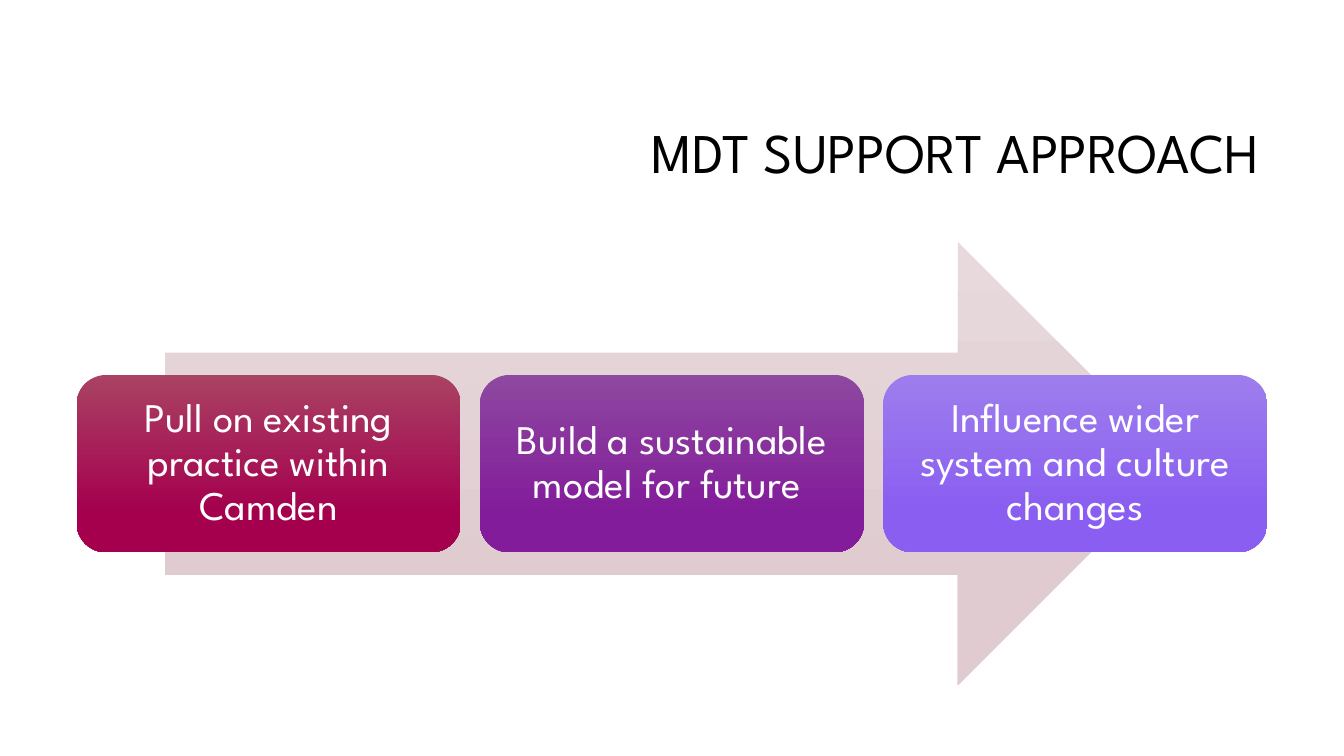
"""Build the MDT support approach slide: three steps along an arrow."""
from pptx import Presentation
from pptx.dml.color import RGBColor
from pptx.enum import shapes, text
from pptx.util import Inches, Pt

FONT = "League Spartan"
STEPS = [
    ("Pull on existing practice within Camden", "A94263", "A4004E"),
    ("Build a sustainable model for future ", "8D48A0", "831C9A"),
    ("Influence wider system and culture changes", "9D7DED", "8A5EF1"),
]


def add_gradient_shape(kind, left, top, width, height, top_color, bottom_color):
    shape = slide.shapes.add_shape(
        kind, Inches(left), Inches(top), Inches(width), Inches(height))
    shape.shadow.inherit = False
    shape.line.fill.background()
    shape.fill.gradient()
    shape.fill.gradient_angle = 270
    stops = zip(shape.fill.gradient_stops, (0, 0.78), (top_color, bottom_color))
    for stop, position, color in stops:
        stop.position = position
        stop.color.rgb = RGBColor.from_string(color)
    return shape


def set_text(shape, wording, size, color, alignment):
    frame = shape.text_frame
    frame.text = wording
    frame.word_wrap = True
    frame.auto_size = text.MSO_AUTO_SIZE.NONE
    frame.vertical_anchor = text.MSO_ANCHOR.MIDDLE
    paragraph = frame.paragraphs[0]
    paragraph.alignment = alignment
    paragraph.line_spacing = 0.9
    paragraph.font.name = FONT
    paragraph.font.size = Pt(size)
    paragraph.font.color.rgb = RGBColor.from_string(color)
    return frame


presentation = Presentation()
presentation.slide_width = Inches(13.33)
presentation.slide_height = Inches(7.5)
slide = presentation.slides.add_slide(presentation.slide_layouts[5])

title = slide.shapes.title
title.left, title.top = Inches(3.17), Inches(0.84)
title.width, title.height = Inches(9.42), Inches(1.41)
set_text(title, "MDT SUPPORT APPROACH", 40, "000000", text.PP_ALIGN.RIGHT)

add_gradient_shape(shapes.MSO_SHAPE.RIGHT_ARROW, 1.64, 2.4, 10.06, 4.4, "E7D9DC", "DFCBD0")

for index, (wording, top_color, bottom_color) in enumerate(STEPS):
    step = add_gradient_shape(
        shapes.MSO_SHAPE.ROUNDED_RECTANGLE, 0.76 + 4 * index, 3.72, 3.81, 1.76,
        top_color, bottom_color)
    frame = set_text(step, wording, 29, "FFFFFF", text.PP_ALIGN.CENTER)
    frame.margin_left = frame.margin_right = Inches(0.12)
    frame.margin_top = frame.margin_bottom = Inches(0.12)

presentation.save("out.pptx")
